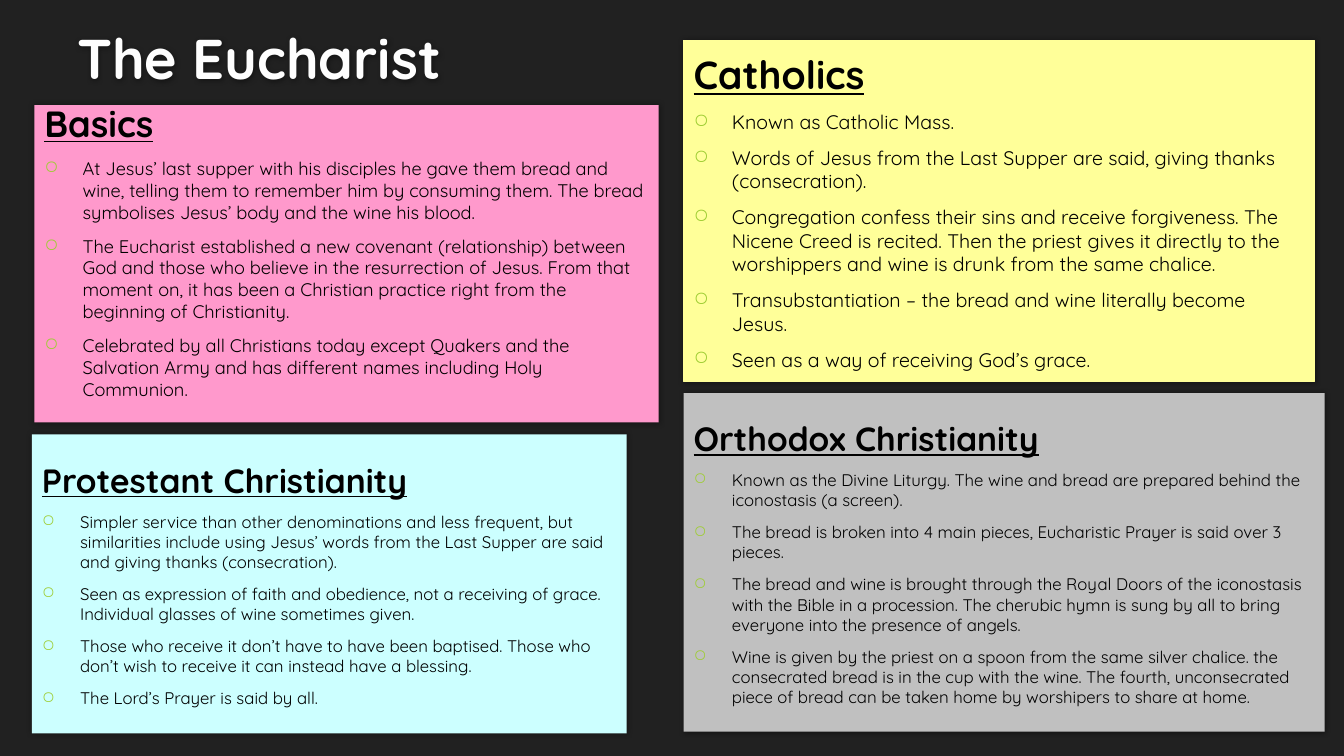
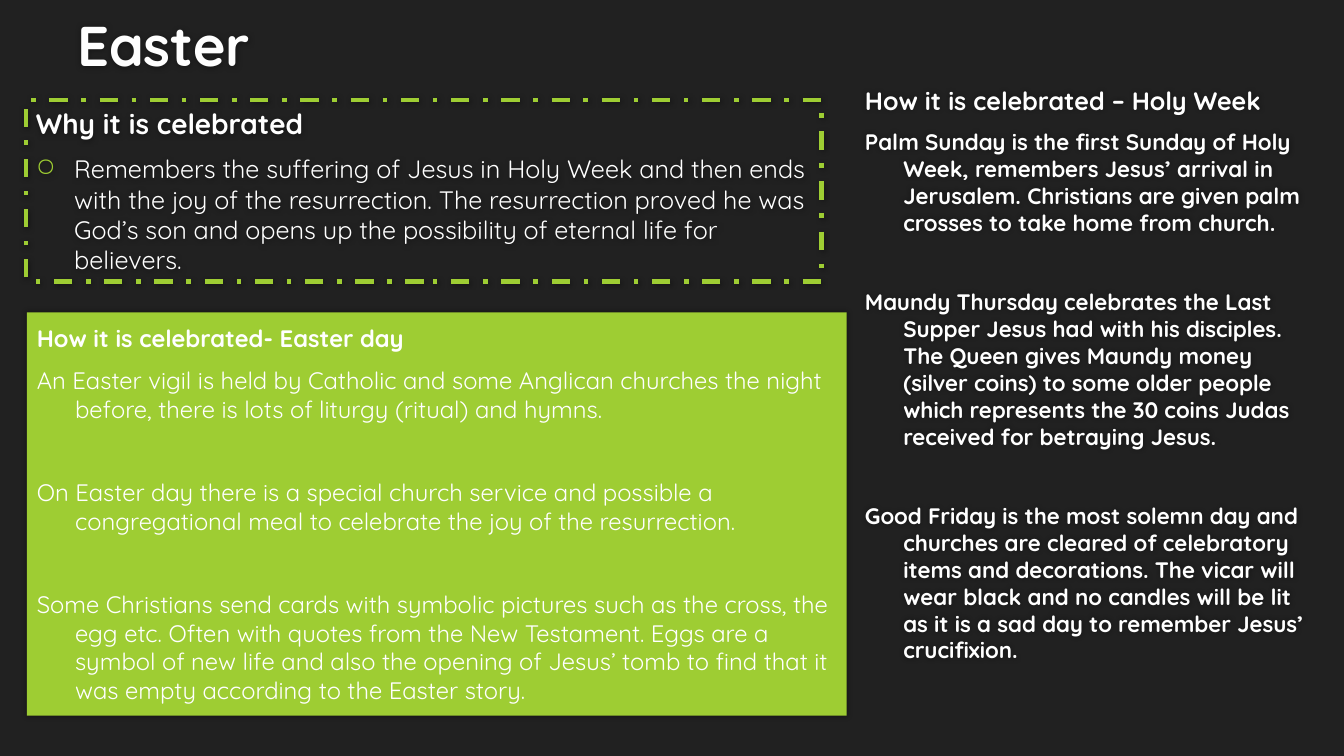
from dataclasses import dataclass

from lxml import etree
from pptx import Presentation
from pptx.dml.color import RGBColor
from pptx.enum.dml import MSO_LINE
from pptx.enum.shapes import MSO_SHAPE
from pptx.enum.text import MSO_ANCHOR, PP_ALIGN
from pptx.oxml.ns import qn
from pptx.util import Inches, Pt

RECT = MSO_SHAPE.RECTANGLE
LEFT = PP_ALIGN.LEFT
MIDDLE, BOTTOM = MSO_ANCHOR.MIDDLE, MSO_ANCHOR.BOTTOM
DASH = MSO_LINE.DASH_DOT

WIDTH, HEIGHT = Inches(13.33), Inches(7.5)
COLS, ROWS = 160, 90
FONT = "Quicksand"
DARK, WHITE, BLACK, LIME = "212121", "FFFFFF", "000000", "9ECD33"
PALE, PINK, YELLOW, CYAN, GREY = "FEFEFE", "FF99CC", "FFFF99", "CCFFFF", "C0C0C0"
HANG = Inches(0.38)


@dataclass(frozen=True)
class Panel:
    """A headed text block; box is left, top, width, height in grid cells."""
    box: tuple[float, float, float, float]
    head: str
    texts: tuple[str, ...]
    top: int
    size: int
    fill: str | None = None
    line: str | None = None
    weight: float = 0.75
    dash: bool = False
    ink: str = BLACK
    under: bool = False
    bold: bool = False
    bullet: bool = False
    airy: bool = False
    insets: tuple[float, float] = (0.05, 0.05)


@dataclass(frozen=True)
class Page:
    title: str
    base: float
    panels: tuple[Panel, ...]


def hue(code: str) -> RGBColor:
    return RGBColor.from_string(code)


def place(col: float, row: float, wide: float, high: float) -> tuple[int, ...]:
    """Turn grid cells into slide lengths."""
    return (round(WIDTH * col / COLS), round(HEIGHT * row / ROWS),
            round(WIDTH * wide / COLS), round(HEIGHT * high / ROWS))


def shade(shape) -> None:
    """Give the shape a soft dark glow."""
    shape.shadow.inherit = False
    effects = shape._element.spPr.find(qn("a:effectLst"))
    glow = etree.SubElement(effects, qn("a:outerShdw"), blurRad=str(Pt(4)),
                            dist="0", dir="14400000", rotWithShape="0")
    tint = etree.SubElement(glow, qn("a:srgbClr"), val=BLACK)
    etree.SubElement(tint, qn("a:alpha"), val="40000")


def write(para, text: str, size: int, ink: str, **style: bool) -> None:
    run = para.add_run()
    run.text = text
    look = {"name": FONT, "size": Pt(size), **style}
    for key, value in look.items():
        setattr(run.font, key, value)
    run.font.color.rgb = hue(ink)
    para.alignment = LEFT


def space(para, size: int, after: float = 6) -> None:
    """Set the hanging indent and the gaps around a paragraph."""
    para.space_before, para.space_after = Pt(0.2 * size), Pt(after)
    props = para._p.get_or_add_pPr()
    props.set("marL", str(HANG))
    props.set("indent", str(-HANG))


def mark(para) -> None:
    """Add a lime ring bullet."""
    props = para._p.get_or_add_pPr()
    tint = etree.SubElement(props, qn("a:buClr"))
    etree.SubElement(tint, qn("a:srgbClr"), val=LIME)
    etree.SubElement(props, qn("a:buChar"), char="○")


def draw_title(slide, text: str, base: float) -> None:
    box = slide.shapes.add_textbox(*place(8, 0, 144, base))
    shade(box)
    frame = box.text_frame
    frame.word_wrap = True
    frame.vertical_anchor = BOTTOM
    write(frame.paragraphs[0], text, 40, PALE, bold=True)


def draw_panel(slide, panel: Panel) -> None:
    shape = slide.shapes.add_shape(RECT, *place(*panel.box))
    shade(shape)
    if panel.fill:
        shape.fill.solid()
        shape.fill.fore_color.rgb = hue(panel.fill)
    else:
        shape.fill.background()
    if panel.line:
        shape.line.color.rgb = hue(panel.line)
        shape.line.width = Pt(panel.weight)
        if panel.dash:
            shape.line.dash_style = DASH
    else:
        shape.line.fill.background()

    frame = shape.text_frame
    frame.word_wrap = True
    frame.vertical_anchor = MIDDLE
    frame.margin_top, frame.margin_bottom = map(Inches, panel.insets)
    head = frame.paragraphs[0]
    write(head, panel.head, panel.top, panel.ink, bold=True, underline=panel.under)
    space(head, panel.top)
    for text in panel.texts:
        para = frame.add_paragraph()
        write(para, text, panel.size, panel.ink, bold=panel.bold)
        wide = panel.airy and text != panel.texts[-1]
        space(para, panel.size, 12 + 1.4 * panel.size if wide else 6)
        if panel.bullet:
            mark(para)


LISTED = {"under": True, "bullet": True}

PAGES = (
    Page("The Eucharist", 11.4, (
        Panel((4.1, 12.5, 74.3, 37.8), "Basics", (
            "At Jesus’ last supper with his disciples he gave them bread and wine, "
            "telling them to remember him by consuming them. The bread symbolises "
            "Jesus’ body and the wine his blood.",
            "The Eucharist established a new covenant (relationship) between God and "
            "those who believe in the resurrection of Jesus. From that moment on, it "
            "has been a Christian practice right from the beginning of Christianity.",
            "Celebrated by all Christians today except Quakers and the Salvation Army "
            "and has different names including Holy Communion.",
        ), 26, 13, PINK, insets=(0, 0.26), **LISTED),
        Panel((81.4, 4.8, 75.1, 40.6), "Catholics", (
            "Known as Catholic Mass.",
            "Words of Jesus from the Last Supper are said, giving thanks "
            "(consecration).",
            "Congregation confess their sins and receive forgiveness. The Nicene Creed "
            "is recited. Then the priest gives it directly to the worshippers and wine "
            "is drunk from the same chalice.",
            "Transubstantiation – the bread and wine literally become Jesus.",
            "Seen as a way of receiving God’s grace.",
        ), 28, 14, YELLOW, line=YELLOW, **LISTED),
        Panel((3.8, 51.7, 70.8, 35.6), "Protestant Christianity", (
            "Simpler service than other denominations and less frequent, but "
            "similarities include using Jesus’ words from the Last Supper are said and "
            "giving thanks (consecration).",
            "Seen as expression of faith and obedience, not a receiving of grace. "
            "Individual glasses of wine sometimes given.",
            "Those who receive it don’t have to have been baptised. Those who don’t "
            "wish to receive it can instead have a blessing.",
            "The Lord’s Prayer is said by all.",
        ), 24, 12, CYAN, **LISTED),
        Panel((81.4, 46.8, 76.3, 40.3), "Orthodox Christianity", (
            "Known as the Divine Liturgy. The wine and bread are prepared behind the "
            "iconostasis (a screen).",
            "The bread is broken into 4 main pieces, Eucharistic Prayer is said over 3 "
            "pieces.",
            "The bread and wine is brought through the Royal Doors of the iconostasis "
            "with the Bible in a procession. The cherubic hymn is sung by all to bring "
            "everyone into the presence of angels.",
            "Wine is given by the priest on a spoon from the same silver chalice. the "
            "consecrated bread is in the cup with the wine. The fourth, unconsecrated "
            "piece of bread can be taken home by worshipers to share at home.",
        ), 24, 12, GREY, **LISTED),
    )),
    Page("Easter", 9.8, (
        Panel((3.1, 11.9, 94.7, 21.6), "Why it is celebrated", (
            "Remembers the suffering of Jesus in Holy Week and then ends with the joy "
            "of the resurrection. The resurrection proved he was God’s son and opens "
            "up the possibility of eternal life for believers.",
        ), 20, 18, line=LIME, weight=3.25, dash=True, ink=WHITE, bullet=True),
        Panel((101.8, 3.7, 56.5, 81.7), "How it is celebrated – Holy Week", (
            "Palm Sunday is the first Sunday of Holy Week, remembers Jesus’ arrival in "
            "Jerusalem. Christians are given palm crosses to take home from church.",
            "Maundy Thursday celebrates the Last Supper Jesus had with his disciples. "
            "The Queen gives Maundy money (silver coins) to some older people which "
            "represents the 30 coins Judas received for betraying Jesus.",
            "Good Friday is the most solemn day and churches are cleared of "
            "celebratory items and decorations. The vicar will wear black and no "
            "candles will be lit as it is a sad day to remember Jesus’ crucifixion.",
        ), 18, 16, ink=WHITE, bold=True, airy=True),
        Panel((3.2, 37.2, 97.6, 48), "How it is celebrated- Easter day", (
            "An Easter vigil is held by Catholic and some Anglican churches the night "
            "before, there is lots of liturgy (ritual) and hymns.",
            "On Easter day there is a special church service and possible a "
            "congregational meal to celebrate the joy of the resurrection.",
            "Some Christians send cards with symbolic pictures such as the cross, the "
            "egg etc. Often with quotes from the New Testament. Eggs are a symbol of "
            "new life and also the opening of Jesus’ tomb to find that it was empty "
            "according to the Easter story.",
        ), 17, 17, LIME, ink=WHITE, airy=True),
    )),
)


def main() -> None:
    deck = Presentation()
    deck.slide_width, deck.slide_height = WIDTH, HEIGHT
    blank = deck.slide_layouts[6]
    for page in PAGES:
        slide = deck.slides.add_slide(blank)
        slide.background.fill.solid()
        slide.background.fill.fore_color.rgb = hue(DARK)
        draw_title(slide, page.title, page.base)
        for panel in page.panels:
            draw_panel(slide, panel)
    deck.save("out.pptx")


if __name__ == "__main__":
    main()
